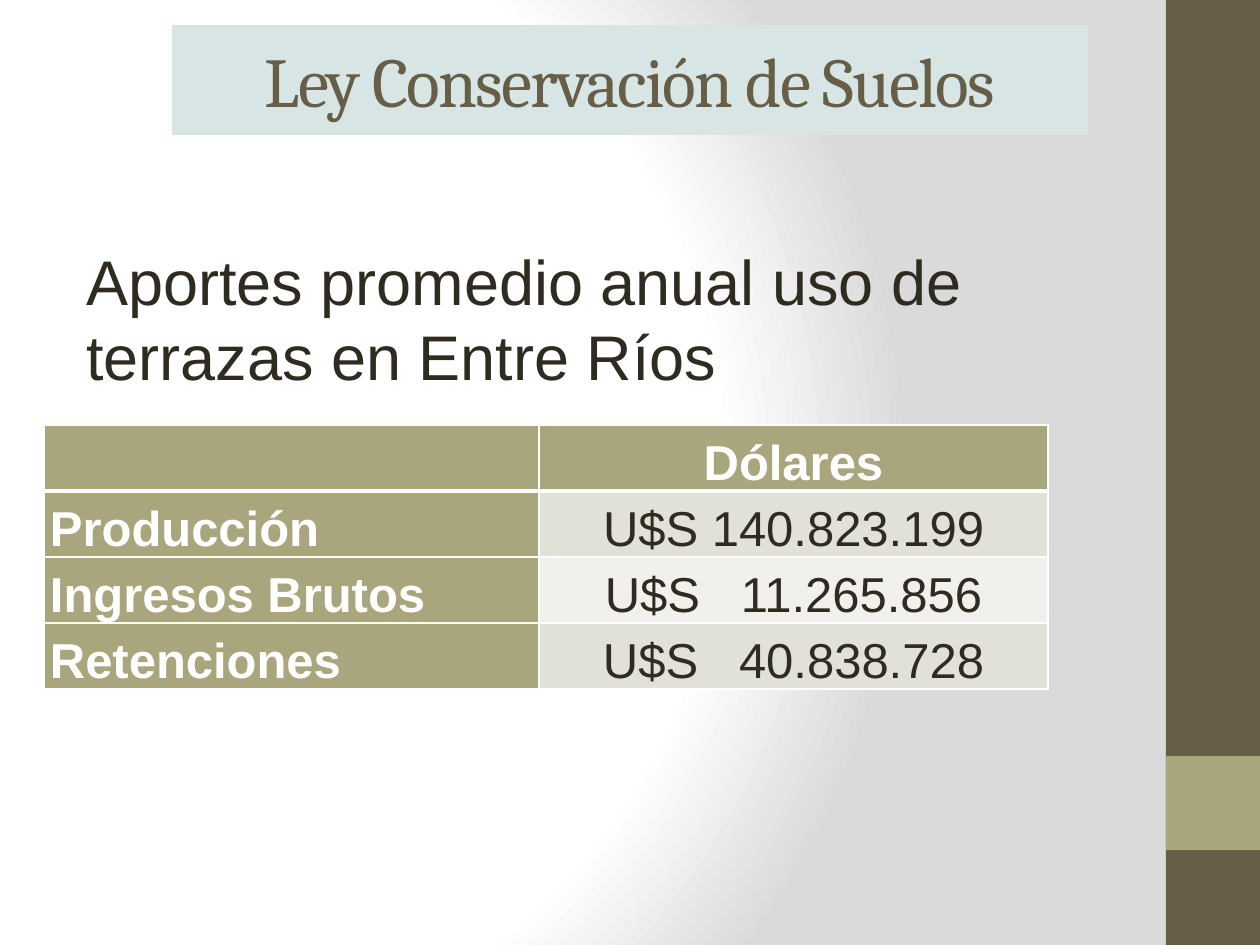
from dataclasses import dataclass

from lxml.etree import SubElement
from pptx import Presentation
from pptx.dml.color import RGBColor
from pptx.enum.shapes import MSO_SHAPE
from pptx.enum.text import MSO_ANCHOR, PP_ALIGN
from pptx.oxml import parse_xml
from pptx.oxml.ns import nsdecls, qn
from pptx.util import Pt

# Content
TITLE = "Ley Conservación de Suelos"
INTRO = "Aportes promedio anual uso de terrazas en Entre Ríos"
HEADER = "Dólares"
CURRENCY = "U$S"
# label, amount, extra gap after the currency in points
ROWS = [
    ("Producción", "140.823.199", 0),
    ("Ingresos Brutos", "11.265.856", 15.6),
    ("Retenciones", "40.838.728", 15.6),
]


@dataclass(frozen=True)
class Theme:
    brown: str = "675E47"
    olive: str = "A9A57C"
    pale: str = "D7E5E5"
    ink: str = "2F2B20"
    white: str = "FFFFFF"
    grey: str = "DADADA"
    bands: tuple = ("E2E1D7", "F1F0EC")
    heading: str = "Cambria"
    body: str = "Arial"
    title_size: int = 40
    intro_size: int = 36
    table_size: int = 28


T = Theme()
PX = 914400 // 126
SLIDE_W, SLIDE_H = 1260, 945
BAR_X, BAR_W = 1166, 94
TABLE_X, TABLE_Y, ROW_H = 44, 425, 66
COLUMNS = (495, 509)


def px(*lengths):
    return [n * PX for n in lengths]


def add_rect(s, box, color):
    sp = s.shapes.add_shape(MSO_SHAPE.RECTANGLE, *px(*box))
    sp.shadow.inherit = False
    sp.fill.solid()
    sp.fill.fore_color.rgb = RGBColor.from_string(color)
    sp.line.fill.background()
    return sp


def add_run(p, text, size, color, font=T.body, bold=False, spacing=0):
    r = p.add_run()
    r.text = text
    r.font.size, r.font.name, r.font.bold = Pt(size), font, bold
    r.font.color.rgb = RGBColor.from_string(color)
    if spacing:
        r.font._element.set("spc", str(round(spacing * 100)))


def style_cell(cell, fill, bottom=1):
    cell.margin_left = cell.margin_right = 6 * PX
    cell.margin_top = cell.margin_bottom = 0
    cell.vertical_anchor = MSO_ANCHOR.BOTTOM
    tcPr = cell._tc.get_or_add_tcPr()
    for side, width in (("L", 1), ("R", 1), ("T", 1), ("B", bottom)):
        ln = SubElement(tcPr, qn(f"a:ln{side}"), w=str(Pt(width)))
        solid = SubElement(ln, qn("a:solidFill"))
        SubElement(solid, qn("a:srgbClr"), val=T.white)
    cell.fill.solid()
    cell.fill.fore_color.rgb = RGBColor.from_string(fill)
    p = cell.text_frame.paragraphs[0]
    p.line_spacing = 1.07
    p.font.size = Pt(T.table_size)
    return p


def add_background(s):
    s.background.fill.gradient()
    old = s.element.find(".//" + qn("a:gradFill"))
    stops = "".join(
        f'<a:gs pos="{pos * 1000}"><a:srgbClr val="{color}"/></a:gs>'
        for pos, color in ((0, T.white), (75, T.white), (100, T.grey))
    )
    old.getparent().replace(old, parse_xml(
        f'<a:gradFill rotWithShape="1" {nsdecls("a")}><a:gsLst>{stops}</a:gsLst>'
        '<a:path path="circle"><a:fillToRect l="20000" t="50000" r="100000" b="50000"/>'
        "</a:path></a:gradFill>"))


def add_table(s):
    n = len(ROWS) + 1
    frame = s.shapes.add_table(
        n, 2, *px(TABLE_X, TABLE_Y, sum(COLUMNS), n * ROW_H))
    table = frame.table
    for column, width in zip(table.columns, COLUMNS):
        column.width = width * PX
    for row in table.rows:
        row.height = ROW_H * PX

    # Header row
    style_cell(table.cell(0, 0), T.olive, bottom=3)
    p = style_cell(table.cell(0, 1), T.olive, bottom=3)
    p.alignment = PP_ALIGN.CENTER
    add_run(p, HEADER, T.table_size, T.white, bold=True)

    # Labels and amounts
    for i, (label, amount, gap) in enumerate(ROWS):
        p = style_cell(table.cell(i + 1, 0), T.olive)
        add_run(p, label, T.table_size, T.white, bold=True)
        p = style_cell(table.cell(i + 1, 1), T.bands[i % 2])
        p.alignment = PP_ALIGN.CENTER
        for text, spacing in ((CURRENCY, 0), (" ", gap), (amount, 0)):
            add_run(p, text, T.table_size, T.ink, spacing=spacing)


def main():
    prs = Presentation()
    prs.slide_width, prs.slide_height = px(SLIDE_W, SLIDE_H)
    s = prs.slides.add_slide(prs.slide_layouts[6])

    # Background and side bar
    add_background(s)
    add_rect(s, (BAR_X, 0, BAR_W, SLIDE_H), T.brown)
    add_rect(s, (BAR_X, 756, BAR_W, BAR_W), T.olive)

    # Title
    tf = add_rect(s, (172, 25, 916, 110), T.pale).text_frame
    tf.word_wrap = True
    tf.vertical_anchor = MSO_ANCHOR.MIDDLE
    p = tf.paragraphs[0]
    p.alignment = PP_ALIGN.CENTER
    add_run(p, TITLE, T.title_size, T.brown, T.heading, spacing=-1)

    # Introduction
    tf = s.shapes.add_textbox(*px(74, 236, 1113, 165)).text_frame
    tf.word_wrap = True
    add_run(tf.paragraphs[0], INTRO, T.intro_size, T.ink)

    add_table(s)
    prs.save("out.pptx")


if __name__ == "__main__":
    main()
